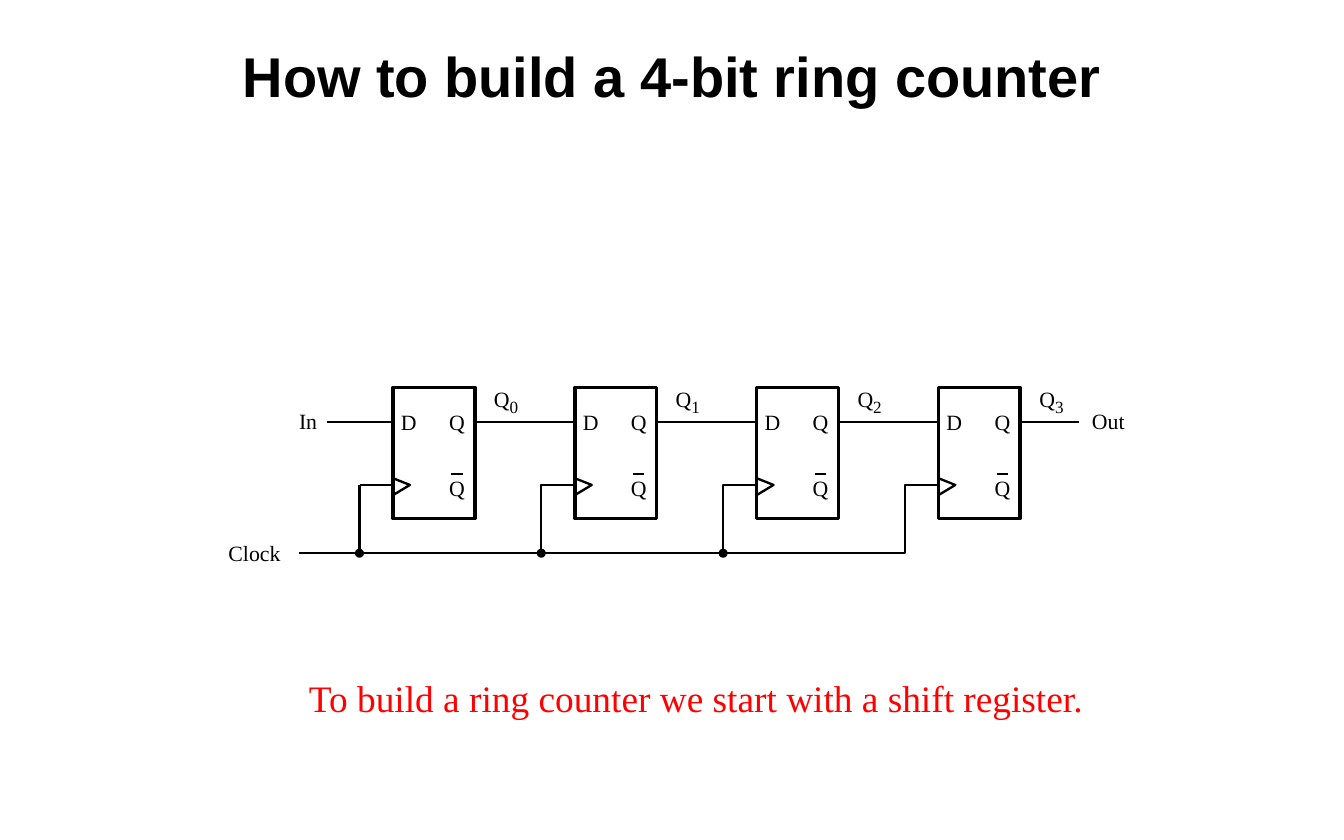
"""Build a slide that shows a 4-bit shift register as the start of a ring counter."""
from dataclasses import dataclass

from lxml.etree import SubElement
from pptx import Presentation
from pptx.dml.color import RGBColor
from pptx.enum.shapes import MSO_CONNECTOR, MSO_SHAPE
from pptx.enum.text import MSO_ANCHOR, MSO_AUTO_SIZE, PP_ALIGN
from pptx.oxml.ns import qn
from pptx.util import Inches, Pt

BLACK, WHITE, RED = "000000", "FFFFFF", "FF0000"
SERIF, SANS = "Times New Roman", "Arial"
FIRST, PITCH = 3.51, 4.87 / 3
COUNT = 4
TOP, WIDE, HIGH = 3.46, 0.73, 1.17
DATA, EDGE, CLOCK = 3.77, 4.33, 4.94
STUB, DOT = 0.3, 0.06
THIN, THICK = 1.5, 2.25


@dataclass
class Label:
    text: str
    left: float
    top: float
    width: float = 0.19
    height: float = 0.24
    size: int = 14
    color: str = BLACK
    inset: float = 0


@dataclass
class Cell:
    index: int
    left: float

    @property
    def right(self) -> float:
        return self.left + WIDE

    @property
    def tap(self) -> float:
        return self.left - STUB


def paint(target, color: str) -> None:
    target.solid()
    target.fore_color.rgb = RGBColor.from_string(color)


def style(para, font: str, size: int, color: str, bold: bool = False) -> None:
    para.font.name = font
    para.font.size = Pt(size)
    para.font.bold = bold
    para.font.color.rgb = RGBColor.from_string(color)


def stroke(shape, width: float) -> None:
    paint(shape.line.fill, BLACK)
    shape.line.width = Pt(width)


def draw_title(slide, text: str) -> None:
    title = slide.shapes.title
    title.left, title.top = Inches(1), Inches(0.3)
    title.width, title.height = Inches(10), Inches(0.75)
    frame = title.text_frame
    frame.text = text
    frame.vertical_anchor = MSO_ANCHOR.MIDDLE
    frame.paragraphs[0].alignment = PP_ALIGN.CENTER
    style(frame.paragraphs[0], SANS, 36, BLACK, bold=True)


def draw_label(slide, label: Label) -> None:
    box = slide.shapes.add_textbox(Inches(label.left), Inches(label.top),
                                   Inches(label.width), Inches(label.height))
    frame = box.text_frame
    frame.word_wrap = False
    frame.auto_size = MSO_AUTO_SIZE.SHAPE_TO_FIT_TEXT
    frame.margin_left = frame.margin_right = Inches(label.inset)
    frame.margin_top = frame.margin_bottom = Inches(label.inset / 2)
    frame.text = label.text
    style(frame.paragraphs[0], SERIF, label.size, label.color)


def draw_shape(slide, kind, left: float, top: float, width: float,
               height: float, fill: str, line: float) -> None:
    shape = slide.shapes.add_shape(kind, Inches(left), Inches(top),
                                   Inches(width), Inches(height))
    shape.shadow.inherit = False
    paint(shape.fill, fill)
    stroke(shape, line)


def draw_line(slide, start: float, end: float, level: float) -> None:
    wire = slide.shapes.add_connector(MSO_CONNECTOR.STRAIGHT, Inches(start),
                                      Inches(level), Inches(end), Inches(level))
    stroke(wire, THIN)
    SubElement(wire.element.spPr, qn("a:effectLst"))


def draw_bend(slide, *points: tuple[float, float]) -> None:
    start, *rest = [(Inches(x), Inches(y)) for x, y in points]
    pen = slide.shapes.build_freeform(*start)
    pen.add_line_segments(rest, close=False)
    shape = pen.convert_to_shape()
    shape.shadow.inherit = False
    shape.fill.background()
    stroke(shape, THIN)


def draw_cell(slide, cell: Cell) -> None:
    draw_shape(slide, MSO_SHAPE.RECTANGLE, cell.left, TOP, WIDE, HIGH, WHITE, THICK)
    draw_label(slide, Label("D", cell.left + 0.07, 3.65))
    for top in (3.65, 4.24):
        draw_label(slide, Label("Q", cell.left + 0.5, top))
    draw_line(slide, cell.left + 0.52, cell.left + 0.62, 4.23)
    draw_bend(slide, (cell.left, 4.42), (cell.left + 0.15, EDGE), (cell.left, 4.27))
    draw_label(slide, Label("Q", cell.left + 0.9, 3.44))
    draw_label(slide, Label(str(cell.index), cell.left + 1.04, 3.54, 0.12, 0.19, 11))


def draw_wires(slide, cells: list[Cell]) -> None:
    first, last = cells[0], cells[-1]
    starts = [2.92] + [cell.right for cell in cells]
    ends = [cell.left for cell in cells] + [9.63]
    for start, end in zip(starts, ends):
        draw_line(slide, start, end, DATA)
    draw_line(slide, 2.67, first.tap, CLOCK)
    draw_line(slide, first.tap, first.left, EDGE)
    draw_bend(slide, (first.tap, EDGE), (first.tap, CLOCK), (last.tap, CLOCK),
              (last.tap, EDGE), (last.left, EDGE))
    for cell in cells[1:-1]:
        draw_bend(slide, (cell.tap, CLOCK), (cell.tap, EDGE), (cell.left, EDGE))
    for cell in cells[:-1]:
        draw_shape(slide, MSO_SHAPE.OVAL, cell.tap - DOT / 2, CLOCK - DOT / 2,
                   DOT, DOT, BLACK, THIN)


def main() -> None:
    deck = Presentation()
    deck.slide_width, deck.slide_height = Inches(12), Inches(7.5)
    slide = deck.slides.add_slide(deck.slide_layouts.get_by_name("Title Only"))
    draw_title(slide, "How to build a 4-bit ring counter")
    draw_label(slide, Label("To build a ring counter we start with a shift register.",
                            2.66, 5.98, 7.51, 0.5, 24, RED, 0.1))
    cells = [Cell(i, FIRST + i * PITCH) for i in range(COUNT)]
    for cell in cells:
        draw_cell(slide, cell)
    draw_wires(slide, cells)
    for label in (Label("In", 2.67, 3.64, 0.2), Label("Out", 9.75, 3.64, 0.36),
                  Label("Clock", 2.04, 4.82, 0.54)):
        draw_label(slide, label)
    deck.save("out.pptx")


if __name__ == "__main__":
    main()
